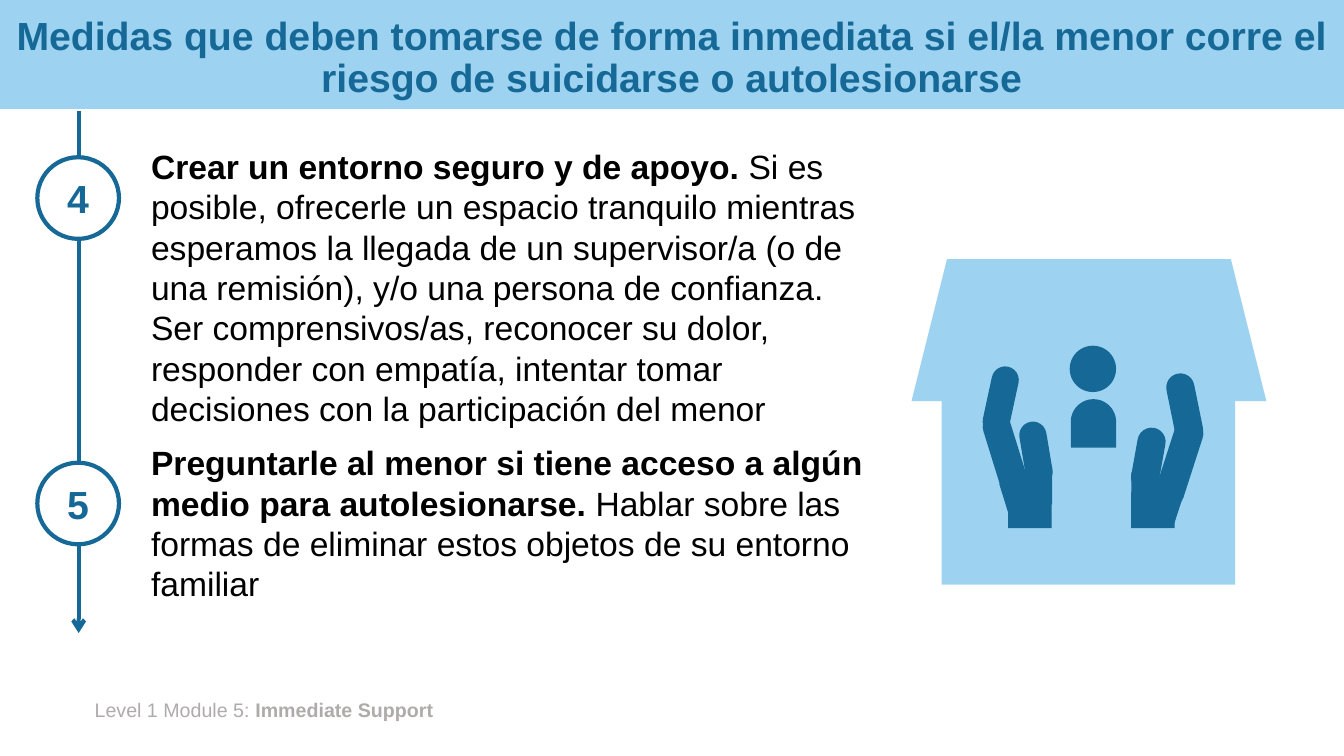
from pptx import Presentation
from pptx.dml.color import RGBColor as RGB
from pptx.enum.shapes import MSO_CONNECTOR as LINE, MSO_SHAPE as SHAPE
from pptx.enum.text import MSO_ANCHOR as ANCHOR, MSO_AUTO_SIZE as AUTO, PP_ALIGN as ALIGN
from pptx.oxml.ns import qn
from pptx.util import Inches, Pt
from lxml.etree import SubElement

HUES = {"sky": "9DD3F1", "blue": "166996", "white": "FFFFFF", "black": "000000", "gray": "AFABAB"}


def draw(home, kind, box, hue, turn=0, flip=False, adj=()):
    form = home.shapes.add_shape(kind, *map(Inches, box))
    form.shadow.inherit = False
    form.fill.solid()
    form.fill.fore_color.rgb = RGB.from_string(HUES[hue])
    form.line.fill.background()
    form.rotation = turn
    if flip:
        form.element.spPr.xfrm.set("flipH", "1")
    for i, part in enumerate(adj):
        form.adjustments[i] = part
    return form


def write(para, text, size, hue, bold=False):
    run = para.add_run()
    run.text = text
    look = {"name": "Arial", "size": Pt(size), "bold": bold}
    for key, value in look.items():
        setattr(run.font, key, value)
    run.font.color.rgb = RGB.from_string(HUES[hue])


deck = Presentation()
deck.slide_width, deck.slide_height = Inches(13.33), Inches(7.5)
slide = deck.slides.add_slide(deck.slide_layouts[5])

# Title over its band
title = slide.shapes.title
band = draw(slide, SHAPE.RECTANGLE, (0, 0, 13.33, 1.08), "sky")
title.element.addprevious(band.element)
place = {"left": -0.01, "top": -0.14, "width": 13.34, "height": 1.45}
for key, value in place.items():
    setattr(title, key, Inches(value))
frame = title.text_frame
frame.auto_size = AUTO.NONE
frame.vertical_anchor = ANCHOR.MIDDLE
para = frame.paragraphs[0]
para.alignment = ALIGN.CENTER
para.line_spacing = 0.9
write(para, "Medidas que deben tomarse de forma inmediata si el/la menor corre el "
      "riesgo de suicidarse o autolesionarse", 28, "blue", True)

# Footer
foot = slide.shapes.add_textbox(*map(Inches, (0.84, 6.87, 4.55, 0.34))).text_frame
foot.word_wrap = True
write(foot.paragraphs[0], "Level 1 Module 5: ", 14, "gray")
write(foot.paragraphs[0], "Immediate Support", 14, "gray", True)

# Steps
steps = [
    ("Crear un entorno seguro y de apoyo.",
     " Si es posible, ofrecerle un espacio tranquilo mientras esperamos la llegada de un "
     "supervisor/a (o de una remisión), y/o una persona de confianza. Ser comprensivos/as, "
     "reconocer su dolor, responder con empatía, intentar tomar decisiones con la "
     "participación del menor"),
    ("Preguntarle al menor si tiene acceso a algún medio para autolesionarse.",
     " Hablar sobre las formas de eliminar estos objetos de su entorno familiar"),
]
body = slide.shapes.add_textbox(*map(Inches, (1.4, 1.4, 7.33, 4.57))).text_frame
body.word_wrap = True
for i, (lead, rest) in enumerate(steps):
    para = body.add_paragraph() if i else body.paragraphs[0]
    para.space_before = Pt(10)
    write(para, lead, 24, "black", True)
    write(para, rest, 24, "black")

# Timeline arrow
arrow = slide.shapes.add_connector(LINE.STRAIGHT, *map(Inches, (0.78, 1.1, 0.78, 6.28)))
arrow.line.width = Pt(3)
arrow.line.color.rgb = RGB.from_string(HUES["blue"])
SubElement(arrow.line._get_or_add_ln(), qn("a:tailEnd"), type="arrow")
SubElement(arrow.element.spPr, qn("a:effectLst"))

# Step numbers
for label, top in (("4", 1.56), ("5", 4.59)):
    ring = draw(slide, SHAPE.OVAL, (0.37, top, 0.81, 0.81), "white")
    ring.line.width = Pt(3)
    ring.line.color.rgb = RGB.from_string(HUES["blue"])
    ring.text_frame.vertical_anchor = ANCHOR.MIDDLE
    para = ring.text_frame.paragraphs[0]
    para.alignment = ALIGN.CENTER
    write(para, label, 28, "blue", True)

# House
house = slide.shapes.add_group_shape()
draw(house, SHAPE.TRAPEZOID, (9.04, 2.57, 3.52, 1.41), "sky", adj=[0.25])
draw(house, SHAPE.RECTANGLE, (9.34, 3.98, 2.91, 1.82), "sky")

# Hands: fingers, palm and wrist on each side
care = slide.shapes.add_group_shape()
fingers = [
    ((9.84, 4.08, 0.28, 0.91), 342.8, False),
    ((9.79, 3.63, 0.27, 0.69), 12.2, False),
    ((10.14, 4.18, 0.27, 0.64), 350.5, False),
    ((11.55, 4.14, 0.29, 0.91), 17.9, True),
    ((11.61, 3.7, 0.28, 0.71), 348.5, True),
    ((11.25, 4.24, 0.28, 0.64), 10.2, True),
]
for box, turn, flip in fingers:
    draw(care, SHAPE.ROUNDED_RECTANGLE, box, "blue", turn, flip, [0.5])
palms = [((10.05, 4.61, 0.35, 0.55), 72.8, True), ((11.26, 4.66, 0.35, 0.56), 287.9, False)]
for box, turn, flip in palms:
    draw(care, SHAPE.FLOWCHART_MANUAL_INPUT, box, "blue", turn, flip)
for left in (10, 11.22):
    draw(care, SHAPE.RECTANGLE, (left, 4.88, 0.43, 0.36), "blue")

# Child
draw(care, SHAPE.ROUND_2_SAME_RECTANGLE, (10.62, 3.96, 0.45, 0.48), "blue", adj=[0.5, 0])
draw(care, SHAPE.OVAL, (10.61, 3.43, 0.46, 0.46), "blue")

deck.save("out.pptx")
